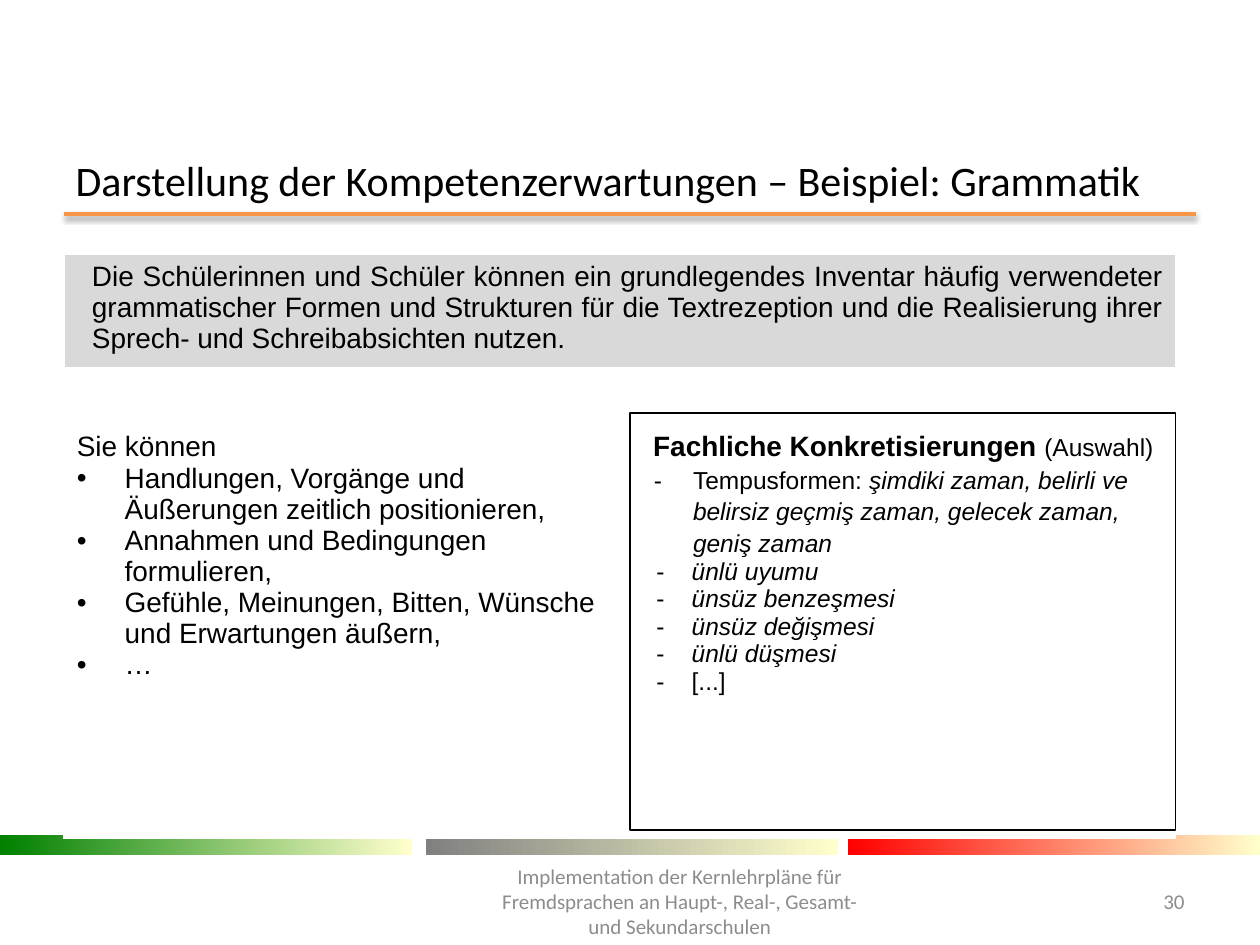
from pptx import Presentation
from pptx.dml.color import RGBColor
from pptx.enum.dml import MSO_THEME_COLOR
from pptx.enum.shapes import MSO_CONNECTOR, MSO_SHAPE
from pptx.enum.text import MSO_ANCHOR, MSO_AUTO_SIZE, PP_ALIGN
from pptx.oxml.ns import qn
from pptx.util import Inches, Pt
from lxml.etree import SubElement

COLORS = {
    "text": "000000", "muted": "8C8C8C", "rule": "F79646", "panel": "D9D9D9",
    "paper": "FFFFFF", "green": "008000", "grey": "808080", "red": "FF0000",
    "cream": "FFFFCC",
}
COLUMNS, ROWS = 100, 75  # grid laid over the whole slide
WIDTH, HEIGHT = Inches(10), Inches(7.5)

CONTENT_LEFT, CONTENT_TOP = 5.1, 20.2
TABLE_COLUMNS = (45, 43.2)
TABLE_ROWS = (8.4, 4.2, 33.1)

INTRO = ("Die Schülerinnen und Schüler können ein grundlegendes Inventar häufig "
         "verwendeter grammatischer Formen und Strukturen für die Textrezeption und "
         "die Realisierung ihrer Sprech- und Schreibabsichten nutzen.")
SKILLS = (
    "Handlungen, Vorgänge und Äußerungen zeitlich positionieren,",
    "Annahmen und Bedingungen formulieren,",
    "Gefühle, Meinungen, Bitten, Wünsche und Erwartungen äußern,",
    "…",
)
TENSES = "şimdiki zaman, belirli ve belirsiz geçmiş zaman, gelecek zaman, geniş zaman"
SOUND_RULES = ("ünlü uyumu", "ünsüz benzeşmesi", "ünsüz değişmesi", "ünlü düşmesi")
FOOTER = ("Implementation der Kernlehrpläne für Fremdsprachen an Haupt-, Real-, "
          "Gesamt- und Sekundarschulen")


def across(columns):
    return round(WIDTH * columns / COLUMNS)


def down(rows):
    return round(HEIGHT * rows / ROWS)


def area(left, top, width, height):
    return across(left), down(top), across(width), down(height)


def color(name):
    return RGBColor.from_string(COLORS[name])


def add_run(para, text, size, font="Arial", tone="text", bold=False, italic=False):
    span = para.add_run()
    span.text = text
    span.font.name, span.font.size = font, Pt(size)
    span.font.bold, span.font.italic = bold, italic
    span.font.color.rgb = color(tone)


def next_paragraph(frame):
    first = frame.paragraphs[0]
    return frame.add_paragraph() if first.runs else first


def add_item(frame, bullet, left, hanging):
    para = next_paragraph(frame)
    properties = para._p.get_or_add_pPr()
    properties.set("marL", str(Inches(left)))
    properties.set("indent", str(-Inches(hanging)))
    SubElement(properties, qn("a:buFont"), typeface="Arial")
    SubElement(properties, qn("a:buChar"), char=bullet)
    return para


def add_rule(slide):
    y = down(17)
    rule = slide.shapes.add_connector(
        MSO_CONNECTOR.STRAIGHT, across(5.1), y, across(94.9), y)
    rule.line.color.rgb, rule.line.width = color("rule"), Pt(2)
    # Soft shadow straight below the rule
    effects = SubElement(rule._element.spPr, qn("a:effectLst"))
    shadow = SubElement(effects, qn("a:outerShdw"), blurRad=str(Pt(3.1)),
                        dist=str(Pt(1.6)), dir="5400000", rotWithShape="0")
    black = SubElement(shadow, qn("a:srgbClr"), val=COLORS["text"])
    SubElement(black, qn("a:alpha"), val="38000")


def add_band(slide, left, tone):
    band = slide.shapes.add_shape(MSO_SHAPE.RECTANGLE, *area(left, 66.3, 32.7, 1.6))
    band.shadow.inherit = False
    band.line.fill.background()
    band.fill.gradient()
    band.fill.gradient_angle = 0
    for stop, name, position in zip(band.fill.gradient_stops, (tone, "cream"), (0, 1)):
        stop.color.rgb, stop.position = color(name), position


def add_title(slide, text):
    title = slide.shapes.title
    title.left, title.top, title.width, title.height = area(5, 12.3, 90, 3.9)
    frame = title.text_frame
    frame.auto_size = MSO_AUTO_SIZE.NONE
    frame.vertical_anchor = MSO_ANCHOR.MIDDLE
    frame.paragraphs[0].alignment = PP_ALIGN.LEFT
    add_run(frame.paragraphs[0], text, 24, "Calibri")


def add_footer(slide, left, width, text, alignment):
    box = slide.shapes.add_textbox(*area(left, 69.5, width, 4))
    frame = box.text_frame
    frame.word_wrap = True
    frame.vertical_anchor = MSO_ANCHOR.MIDDLE
    frame.paragraphs[0].alignment = alignment
    add_run(frame.paragraphs[0], text, 12, "Calibri", "muted")


def add_table(slide):
    holder = slide.shapes.add_table(
        len(TABLE_ROWS), len(TABLE_COLUMNS),
        *area(CONTENT_LEFT, CONTENT_TOP, sum(TABLE_COLUMNS), sum(TABLE_ROWS)))
    table = holder.table
    table.first_row = table.horz_banding = False
    for column, width in zip(table.columns, TABLE_COLUMNS):
        column.width = across(width)
    for row, height in zip(table.rows, TABLE_ROWS):
        row.height = down(height)
    for index in range(2):
        table.cell(index, 0).merge(table.cell(index, 1))
    for cell in table.iter_cells():
        cell.fill.solid()
        cell.fill.fore_color.rgb = color("paper")
    table.cell(0, 0).fill.fore_color.rgb = color("panel")
    return table


def fill_intro(frame):
    para = frame.paragraphs[0]
    para.alignment = PP_ALIGN.JUSTIFY
    para._p.get_or_add_pPr().set("marL", str(Inches(0.12)))
    add_run(para, INTRO, 16)


def fill_skills(frame):
    lead = frame.paragraphs[0]
    lead.line_spacing = 1.15
    add_run(lead, "Sie können", 16)
    for skill in SKILLS:
        add_run(add_item(frame, "•", 0.38, 0.38), skill, 16)


def fill_details(frame):
    heading = frame.paragraphs[0]
    heading.alignment, heading.line_spacing = PP_ALIGN.CENTER, 1.15
    add_run(heading, "Fachliche Konkretisierungen ", 16, bold=True)
    add_run(heading, "(Auswahl)", 14)
    tenses = add_item(frame, "-", 0.39, 0.31)
    tenses.line_spacing = 1.15
    add_run(tenses, "Tempusformen: ", 14)
    add_run(tenses, TENSES, 14, italic=True)
    for rule in SOUND_RULES:
        add_run(add_item(frame, "-", 0.38, 0.28), rule, 14, italic=True)
    add_run(add_item(frame, "-", 0.38, 0.28), "[...]", 14)


def add_details_border(slide):
    border = slide.shapes.add_shape(
        MSO_SHAPE.RECTANGLE,
        *area(50, CONTENT_TOP + sum(TABLE_ROWS[:2]), 43.3, TABLE_ROWS[2]))
    border.shadow.inherit = False
    border.fill.background()
    border.line.color.rgb, border.line.width = color("text"), Pt(1)


def main():
    deck = Presentation()
    deck.slide_width, deck.slide_height = WIDTH, HEIGHT
    page = deck.slides.add_slide(deck.slide_layouts.get_by_name("Title Only"))

    # Title with rule, and the three colour bands
    add_rule(page)
    for left, tone in ((0, "green"), (33.8, "grey"), (67.3, "red")):
        add_band(page, left, tone)
    add_title(page, "Darstellung der Kompetenzerwartungen – Beispiel: Grammatik")

    # Footer
    add_footer(page, 38.2, 31.5, FOOTER, PP_ALIGN.CENTER)
    add_footer(page, 88.6, 6.4, "30", PP_ALIGN.RIGHT)

    # Competences and their details
    table = add_table(page)
    fill_intro(table.cell(0, 0).text_frame)
    fill_skills(table.cell(2, 0).text_frame)
    fill_details(table.cell(2, 1).text_frame)
    add_details_border(page)

    deck.save("out.pptx")


if __name__ == "__main__":
    main()
